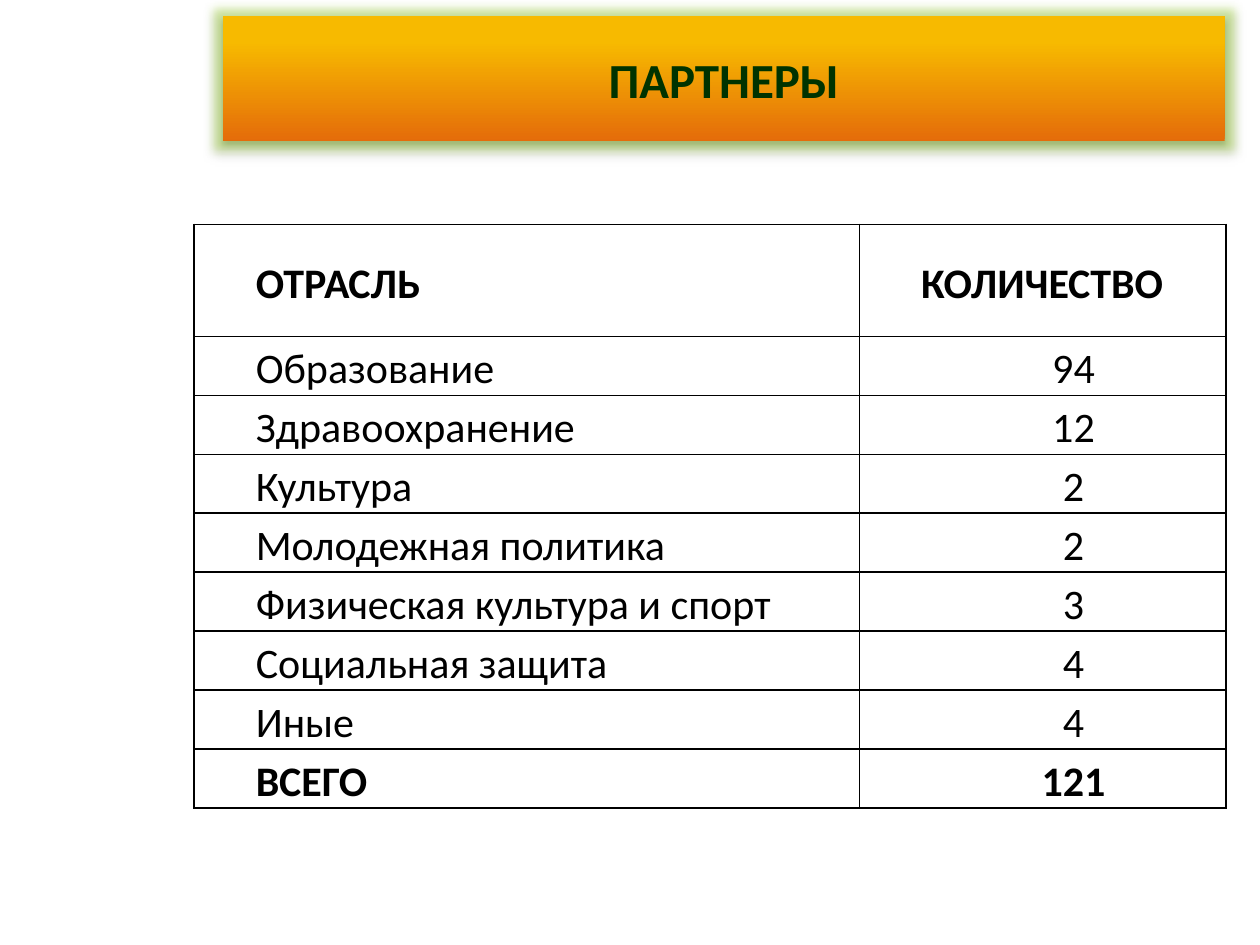
from pptx import Presentation
from pptx.dml.color import RGBColor
from pptx.enum.text import MSO_ANCHOR, MSO_AUTO_SIZE, PP_ALIGN
from pptx.oxml import parse_xml
from pptx.util import Inches, Pt

LEFT, CENTER = PP_ALIGN.LEFT, PP_ALIGN.CENTER
MIDDLE = MSO_ANCHOR.MIDDLE
NO_AUTOFIT = MSO_AUTO_SIZE.NONE

BLACK = RGBColor(0x00, 0x00, 0x00)
DARK_GREEN = RGBColor(0x00, 0x33, 0x00)
ORANGE = RGBColor(0xE4, 0x6C, 0x0A)
AMBER = RGBColor(0xF7, 0xBA, 0x00)
GOLD = RGBColor(0xF8, 0xBB, 0x00)
GLOW_GREEN = RGBColor(0x9B, 0xD4, 0x2B)

FONT = "Calibri"
TITLE = "ПАРТНЕРЫ"
HEADER = ("ОТРАСЛЬ", "КОЛИЧЕСТВО")
PARTNERS = [
    ("Образование", 94),
    ("Здравоохранение", 12),
    ("Культура", 2),
    ("Молодежная политика", 2),
    ("Физическая культура и спорт", 3),
    ("Социальная защита", 4),
    ("Иные", 4),
]
TOTAL = ("ВСЕГО", sum(count for _, count in PARTNERS))

TITLE_BOX = {"left": 1.77, "top": 0.13, "width": 7.95, "height": 0.99}
GRADIENT_STOPS = [(0, ORANGE), (80, AMBER), (100, GOLD)]
TABLE_LEFT, TABLE_TOP = 1.54, 1.78
COLUMN_WIDTHS = (5.28, 2.91)
HEADER_HEIGHT, ROW_HEIGHT = 0.89, 0.44
FIRST_LINE_INDENT = 0.49

NAMESPACE = 'xmlns:a="http://schemas.openxmlformats.org/drawingml/2006/main"'


def style_run(run, size, color, bold):
    formats = {"name": FONT, "size": Pt(size), "bold": bold}
    for name, value in formats.items():
        setattr(run.font, name, value)
    run.font.color.rgb = color


def style_banner(shape):
    """Give the shape rounded corners, a gradient, a glow and a shadow."""
    stops = "".join(
        f'<a:gs pos="{position * 1000}"><a:srgbClr val="{color}"/></a:gs>'
        for position, color in GRADIENT_STOPS
    )
    parts = (
        '<a:prstGeom {ns} prst="roundRect"><a:avLst>'
        '<a:gd name="adj" fmla="val 9000"/></a:avLst></a:prstGeom>',
        f'<a:gradFill {{ns}} rotWithShape="1"><a:gsLst>{stops}</a:gsLst>'
        '<a:lin ang="16200000" scaled="0"/></a:gradFill>',
        '<a:ln {ns}><a:noFill/></a:ln>',
        f'<a:effectLst {{ns}}><a:glow rad="{Inches(0.15)}">'
        f'<a:srgbClr val="{GLOW_GREEN}"><a:alpha val="40000"/></a:srgbClr></a:glow>'
        f'<a:outerShdw blurRad="{Pt(3.1)}" dist="{Pt(1.8)}" dir="5400000" rotWithShape="0">'
        f'<a:srgbClr val="{BLACK}"><a:alpha val="35000"/></a:srgbClr>'
        '</a:outerShdw></a:effectLst>',
    )
    properties = shape._element.spPr
    for part in parts:
        properties.append(parse_xml(part.format(ns=NAMESPACE)))


def add_borders(cell):
    properties = cell._tc.get_or_add_tcPr()
    for side in ("lnL", "lnR", "lnT", "lnB"):
        properties.append(parse_xml(
            f'<a:{side} {NAMESPACE} w="{Pt(1)}"><a:solidFill>'
            f'<a:srgbClr val="{BLACK}"/></a:solidFill></a:{side}>'
        ))


def fill_cell(cell, text, bold, alignment):
    add_borders(cell)
    cell.fill.background()
    cell.vertical_anchor = MIDDLE
    for side in ("left", "right", "top", "bottom"):
        setattr(cell, f"margin_{side}", 0)
    paragraph = cell.text_frame.paragraphs[0]
    paragraph.alignment = alignment
    paragraph.line_spacing = 1.15
    indents = paragraph._p.get_or_add_pPr()
    indents.set("marL", "0")
    indents.set("indent", str(Inches(FIRST_LINE_INDENT)))
    run = paragraph.add_run()
    run.text = str(text)
    style_run(run, 24, BLACK, bold)


def add_title(slide):
    title = slide.shapes.title
    for name, value in TITLE_BOX.items():
        setattr(title, name, Inches(value))
    style_banner(title)
    frame = title.text_frame
    frame.auto_size = NO_AUTOFIT
    frame.vertical_anchor = MIDDLE
    paragraph = frame.paragraphs[0]
    paragraph.alignment = CENTER
    run = paragraph.add_run()
    run.text = TITLE
    style_run(run, 28, DARK_GREEN, True)


def add_partner_table(slide):
    rows = [HEADER, *PARTNERS, TOTAL]
    heights = [HEADER_HEIGHT] + [ROW_HEIGHT] * (len(rows) - 1)
    table = slide.shapes.add_table(
        len(rows), len(HEADER), Inches(TABLE_LEFT), Inches(TABLE_TOP),
        Inches(sum(COLUMN_WIDTHS)), Inches(sum(heights)),
    ).table
    table.first_row = table.horz_banding = False
    for column, width in zip(table.columns, COLUMN_WIDTHS):
        column.width = Inches(width)
    for row_index, (values, height) in enumerate(zip(rows, heights)):
        table.rows[row_index].height = Inches(height)
        bold = values in (HEADER, TOTAL)
        for column_index, value in enumerate(values):
            alignment = CENTER if isinstance(value, int) else LEFT
            fill_cell(table.cell(row_index, column_index), value, bold, alignment)


def main():
    presentation = Presentation()
    presentation.slide_width = Inches(10)
    presentation.slide_height = Inches(7.5)
    slide = presentation.slides.add_slide(presentation.slide_layouts[5])
    add_title(slide)
    add_partner_table(slide)
    presentation.save("out.pptx")


if __name__ == "__main__":
    main()
